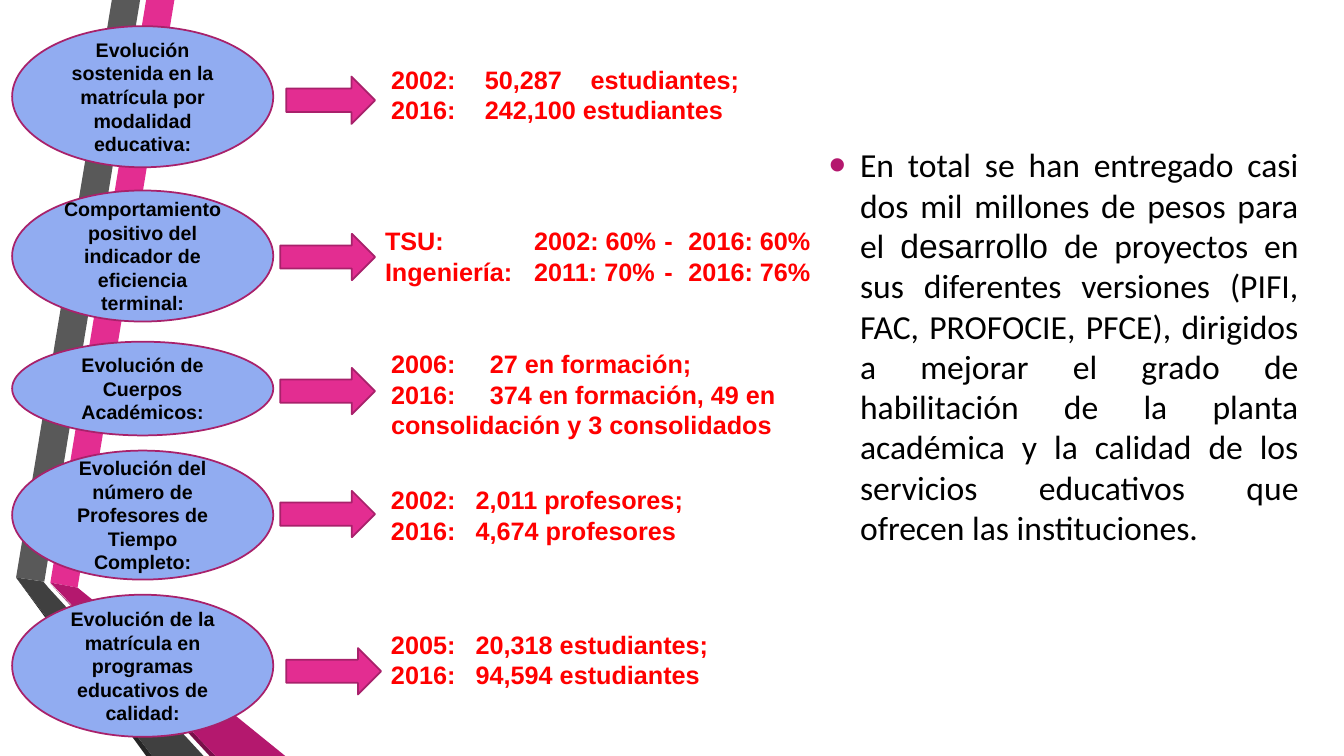
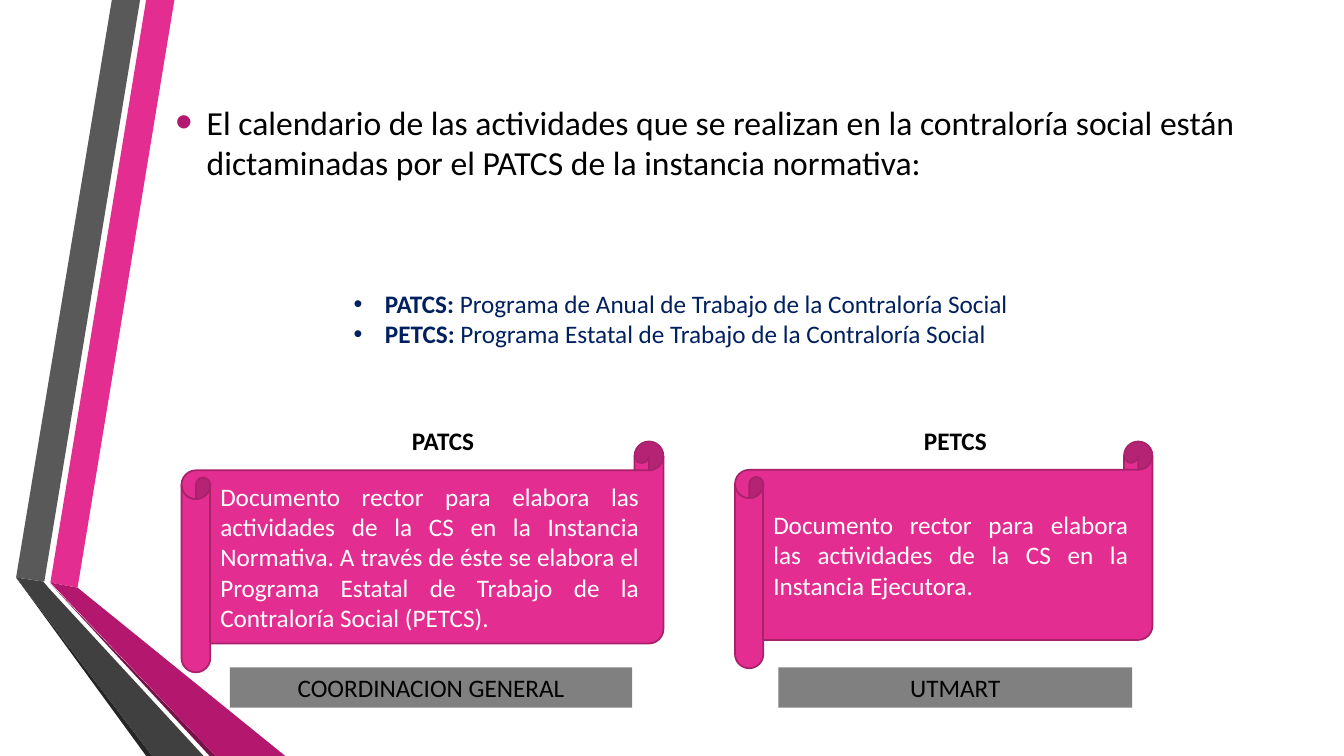
from dataclasses import dataclass

from lxml import etree
from pptx import Presentation
from pptx.dml.color import RGBColor
from pptx.enum.shapes import MSO_SHAPE
from pptx.enum.text import MSO_ANCHOR, MSO_AUTO_SIZE, PP_ALIGN
from pptx.oxml.ns import qn
from pptx.util import Pt

SCALE = 9144
OVAL, ARROW = MSO_SHAPE.OVAL, MSO_SHAPE.RIGHT_ARROW
SCROLL, RECT = MSO_SHAPE.HORIZONTAL_SCROLL, MSO_SHAPE.RECTANGLE
LEFT, MID, JUST = PP_ALIGN.LEFT, PP_ALIGN.CENTER, PP_ALIGN.JUSTIFY
TOP, CENTER = MSO_ANCHOR.TOP, MSO_ANCHOR.MIDDLE
FIXED = MSO_AUTO_SIZE.NONE


@dataclass(frozen=True)
class Theme:
    pink: str = "E32D91"
    edge: str = "A8216B"
    dot: str = "B4186E"
    plum: str = "781049"
    blue: str = "91ACF1"
    navy: str = "002060"
    red: str = "FF0000"
    black: str = "000000"
    white: str = "FFFFFF"
    gray: str = "808080"
    steel: str = "595959"
    coal: str = "404040"
    night: str = "262626"
    sans: str = "Arial"
    face: str = "Calibri"
    large: int = 24
    text: int = 18
    small: int = 14
    line: float = 1.25


THEME = Theme()

BANDS = [
    (THEME.pink, [(50, 578), (77, 583), (173, 0), (145, 0)]),
    (THEME.steel, [(139, 0), (111, 0), (16, 573), (44, 577)]),
    (THEME.night, [(16, 573), (145, 750), (151, 750)]),
    (THEME.plum, [(50, 579), (208, 750), (214, 750)]),
    (THEME.dot, [(50, 578), (214, 750), (283, 750), (77, 583)]),
    (THEME.coal, [(202, 750), (48, 583), (43, 577), (16, 573), (151, 750)]),
]

ROWS = [
    ("Evolución sostenida en la matrícula por modalidad educativa:",
     (26, 140), (284, 76, 88, 47), (378, 59, 365, 101), (93, 198),
     ["2002:\t50,287\testudiantes;", "2016:\t242,100 estudiantes"]),
    ("Comportamiento positivo del indicador de eficiencia terminal:",
     (189, 130), (278, 232, 94, 46), (372, 219, 472, 101), (148, 277, 301),
     ["TSU:\t2002: 60%\t-\t2016: 60%", "Ingeniería:\t2011: 70%\t-\t2016: 76%"]),
    ("Evolución de Cuerpos Académicos:",
     (339, 93), (278, 365, 94, 46), (378, 341, 512, 131), (98,),
     ["2006:\t27 en formación;",
      "2016:\t374 en formación, 49 en consolidación y 3 consolidados"]),
    ("Evolución del número de Profesores de Tiempo Completo:",
     (447, 128), (278, 487, 94, 46), (378, 476, 410, 101), (84,),
     ["2002:\t2,011 profesores;", "2016:\t4,674 profesores"]),
    ("Evolución de la matrícula en programas educativos de calidad:",
     (590, 141), (284, 643, 94, 46), (378, 619, 477, 101), (84,),
     ["2005:\t20,318 estudiantes;", "2016:\t94,594 estudiantes"]),
]

PLANS = [
    ("PATCS", (341, 417, 197, 40), (180, 438, 478, 229),
     "Documento rector para elabora las actividades de la CS en la Instancia "
     "Normativa. A través de éste se elabora el Programa Estatal de Trabajo "
     "de la Contraloría Social (PETCS).",
     "COORDINACION GENERAL", (228, 662, 399, 40)),
    ("PETCS", (849, 417, 197, 40), (729, 438, 414, 225),
     "Documento rector para elabora las actividades de la CS en la Instancia "
     "Ejecutora.",
     "UTMART", (772, 662, 351, 40)),
]


def px(num):
    return num * SCALE


def child(node, tag, **attrs):
    return etree.SubElement(node, qn(tag), attrs)


def put(frame, paras, size=THEME.text, face=THEME.face, color=THEME.black,
        bold=False, align=LEFT, after=0, dot=None, ratio=100, tabs=()):
    frame.word_wrap = True
    for num, runs in enumerate(paras):
        para = frame.add_paragraph() if num else frame.paragraphs[0]
        para.alignment = align
        para.space_before, para.space_after = Pt(0), Pt(after)
        props = para._p.get_or_add_pPr()
        if dot:
            props.set("marL", str(px(31)))
            props.set("indent", str(px(-31)))
            child(child(props, "a:buClr"), "a:srgbClr", val=dot)
            child(props, "a:buSzPct", val=str(ratio * 1000))
            child(props, "a:buFont", typeface=THEME.sans)
            child(props, "a:buChar", char="•")
        if tabs:
            stops = child(props, "a:tabLst")
            for stop in tabs:
                child(stops, "a:tab", pos=str(px(stop)), algn="l")
        for part in [(runs, {})] if isinstance(runs, str) else runs:
            text, extra = part
            run = para.add_run()
            run.text = text
            font = run.font
            font.size = Pt(size)
            font.name = extra.get("face", face)
            font.bold = extra.get("bold", bold)
            font.color.rgb = RGBColor.from_string(color)


class Deck:
    """Hold the style and the current slide, and add elements to it."""

    def __init__(self, theme):
        self.theme = theme
        self.prs = Presentation()
        self.prs.slide_width, self.prs.slide_height = px(1333), px(750)
        self.slide = None

    def start(self):
        self.slide = self.prs.slides.add_slide(self.prs.slide_layouts[1])
        title = self.slide.shapes.title.element
        title.getparent().remove(title)

    def paint(self, shape, fill, line=None):
        shape.shadow.inherit = False
        shape.fill.solid()
        shape.fill.fore_color.rgb = RGBColor.from_string(fill)
        if line:
            shape.line.color.rgb = RGBColor.from_string(line)
            shape.line.width = Pt(self.theme.line)
        else:
            shape.line.fill.background()

    def bands(self, bands):
        group = self.slide.shapes.add_group_shape()
        for fill, points in bands:
            pen = group.shapes.build_freeform(*points[0], scale=SCALE)
            pen.add_line_segments(points[1:], close=True)
            self.paint(pen.convert_to_shape(), fill)
        for num, node in enumerate(group.element.iter(qn("p:cNvPr")), 100):
            node.set("id", str(num))
        self.prs.slide_master.shapes.element.insert(2, group.element)

    def body(self, box, runs, anchor=CENTER, inset=5, **style):
        shape = self.slide.placeholders[1]
        shape.left, shape.top, shape.width, shape.height = map(px, box)
        frame = shape.text_frame
        frame.auto_size = FIXED
        frame.vertical_anchor = anchor
        frame.margin_top = px(inset)
        put(frame, [runs], size=self.theme.large, after=6,
            dot=self.theme.dot, ratio=145, **style)

    def shape(self, kind, box, fill, line=None, text=None, **style):
        shape = self.slide.shapes.add_shape(kind, *map(px, box))
        self.paint(shape, fill, line)
        if text:
            shape.text_frame.vertical_anchor = CENTER
            put(shape.text_frame, [text], **style)

    def note(self, box, paras, **style):
        shape = self.slide.shapes.add_textbox(*map(px, box))
        put(shape.text_frame, paras, **style)


def growth(deck):
    theme = deck.theme
    deck.body((812, 143, 486, 446), [
        ("En total se han entregado casi dos mil millones de pesos para el ", {}),
        ("desarrollo", {"face": theme.sans}),
        (" de proyectos en sus diferentes versiones (PIFI, FAC, PROFOCIE, "
         "PFCE), dirigidos a mejorar el grado de habilitación de la planta "
         "académica y la calidad de los servicios educativos que ofrecen las "
         "instituciones.", {}),
    ], anchor=TOP, inset=0, align=JUST)
    for topic, (top, high), arrow, box, tabs, facts in ROWS:
        deck.shape(OVAL, (12, top, 259, high), theme.blue, theme.edge, topic,
                   size=theme.small, face=theme.sans, bold=True, align=MID)
        deck.shape(ARROW, arrow, theme.pink, theme.edge)
        deck.note(box, facts, face=theme.sans, color=theme.red, bold=True,
                  tabs=tabs)


def plans(deck):
    theme = deck.theme
    deck.body((164, 55, 1096, 172),
              "El calendario de las actividades que se realizan en la "
              "contraloría social están dictaminadas por el PATCS de la "
              "instancia normativa:")
    strong = {"bold": True}
    deck.note((341, 281, 807, 71), [
        [("PATCS: ", strong),
         ("Programa de Anual de Trabajo de la Contraloría Social", {})],
        [("PETCS: ", strong),
         ("Programa Estatal de Trabajo de la Contraloría Social", {})],
    ], color=theme.navy, align=JUST, dot=theme.navy)
    for name, head, scroll, text, owner, label in PLANS:
        deck.shape(SCROLL, scroll, theme.pink, theme.edge, text,
                   color=theme.white, align=JUST)
        deck.note(head, [name], bold=True, align=MID)
        deck.shape(RECT, label, theme.gray, text=owner, align=MID)


def main():
    deck = Deck(THEME)
    deck.start()
    deck.bands(BANDS)
    growth(deck)
    deck.start()
    plans(deck)
    deck.prs.save("out.pptx")


if __name__ == "__main__":
    main()
